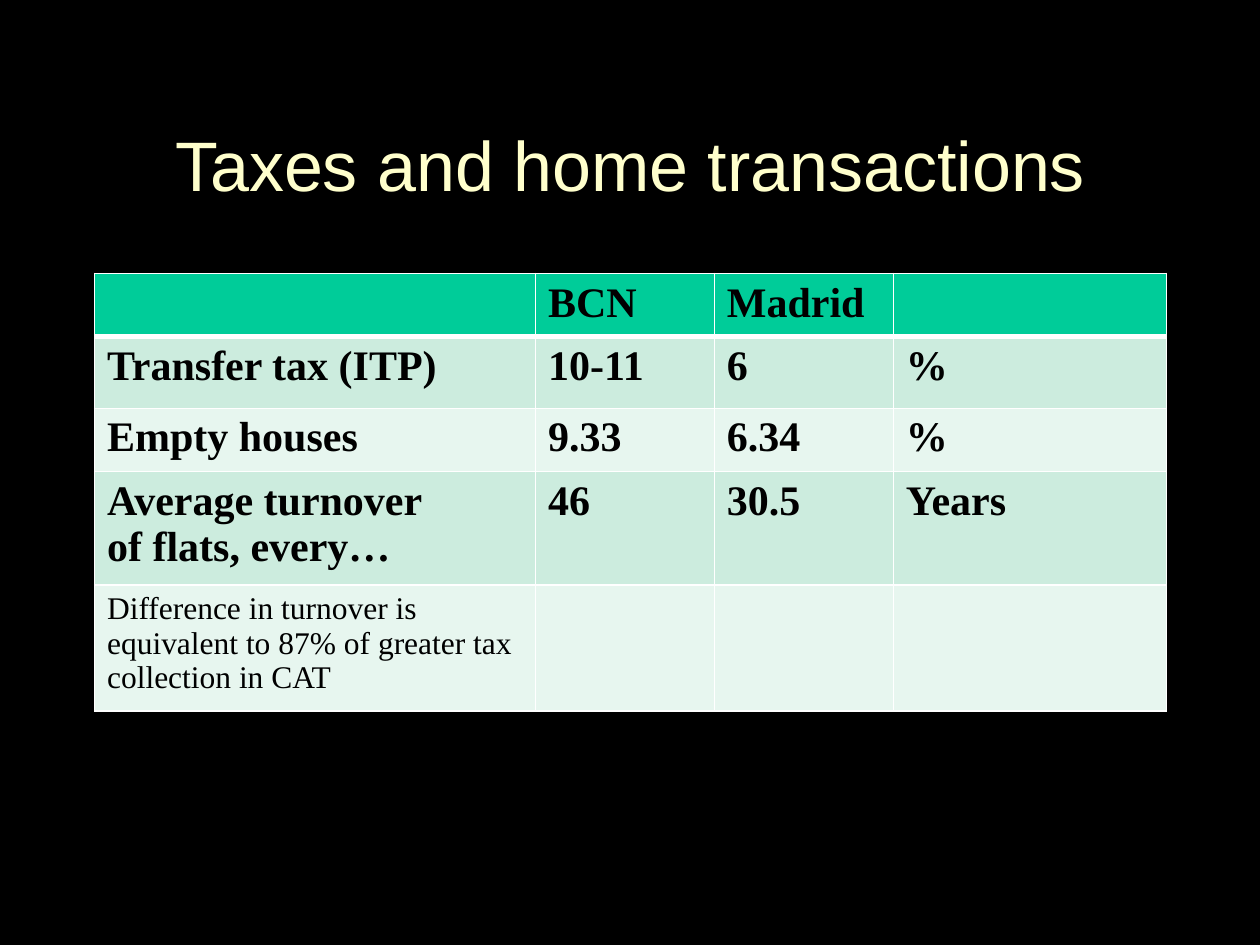
from lxml.etree import SubElement
from pptx import Presentation
from pptx.dml.color import RGBColor
from pptx.enum.text import MSO_ANCHOR as Anchor, PP_ALIGN as Align
from pptx.oxml.ns import qn
from pptx.util import Inches, Pt

BLACK = RGBColor(0x00, 0x00, 0x00)
WHITE = RGBColor(0xFF, 0xFF, 0xFF)
CREAM = RGBColor(0xFF, 0xFF, 0xCC)
GREEN = RGBColor(0x00, 0xCC, 0x99)
MINT = RGBColor(0xCC, 0xEC, 0xDE)
PALE_MINT = RGBColor(0xE7, 0xF6, 0xEF)

HEADING = "Taxes and home transactions"
ROWS = [
    ("", "BCN", "Madrid", ""),
    ("Transfer tax (ITP)", "10-11", "6", "%"),
    ("Empty houses", "9.33", "6.34", "%"),
    ("Average turnover\nof flats, every…", "46", "30.5", "Years"),
    ("Difference in turnover is equivalent to 87% of greater tax collection in CAT", "", "", ""),
]
COLUMN_WIDTHS = [3.5, 1.42, 1.42, 2.17]
ROW_HEIGHTS = [0.47, 0.57, 0.47, 0.84, 0.93]
LEFT, WIDTH = 0.75, 8.5


def write(frame, text, size=24, font="Times New Roman", color=BLACK, bold=False, align=Align.LEFT):
    paragraph = frame.paragraphs[0]
    paragraph.alignment = align
    for number, line in enumerate(text.split("\n")):
        if number:
            paragraph.add_line_break()
        run = paragraph.add_run()
        run.text = line
        run.font.size = Pt(size)
        run.font.name = font
        run.font.bold = bold
        run.font.color.rgb = color


def add_borders(cell, bottom_width):
    properties = cell._tc.get_or_add_tcPr()
    sides = [("a:lnL", 1), ("a:lnR", 1), ("a:lnT", 1), ("a:lnB", bottom_width)]
    for position, (side, width) in enumerate(sides):
        border = SubElement(properties, qn(side), w=str(Pt(width)))
        fill = SubElement(border, qn("a:solidFill"))
        SubElement(fill, qn("a:srgbClr"), val=str(WHITE))
        properties.insert(position, border)


def add_heading(slide):
    heading = slide.shapes.add_textbox(Inches(LEFT), Inches(0.67), Inches(WIDTH), Inches(1.25))
    frame = heading.text_frame
    frame.word_wrap = True
    frame.vertical_anchor = Anchor.MIDDLE
    write(frame, HEADING, size=40, font="Arial", color=CREAM, align=Align.CENTER)


def add_comparison(slide):
    comparison = slide.shapes.add_table(
        len(ROWS), len(COLUMN_WIDTHS), Inches(LEFT), Inches(2.17),
        Inches(WIDTH), Inches(sum(ROW_HEIGHTS))).table
    for column, width in zip(comparison.columns, COLUMN_WIDTHS):
        column.width = Inches(width)
    for row, height in zip(comparison.rows, ROW_HEIGHTS):
        row.height = Inches(height)

    last = len(ROWS) - 1
    for r, entries in enumerate(ROWS):
        band = GREEN if r == 0 else MINT if r % 2 else PALE_MINT
        for c, entry in enumerate(entries):
            cell = comparison.cell(r, c)
            cell.fill.solid()
            cell.fill.fore_color.rgb = band
            add_borders(cell, bottom_width=3 if r == 0 else 1)
            if entry:
                write(cell.text_frame, entry, size=18 if r == last else 24, bold=r != last)


def main():
    deck = Presentation()
    deck.slide_width, deck.slide_height = Inches(10), Inches(7.5)
    slide = deck.slides.add_slide(deck.slide_layouts[6])
    slide.background.fill.solid()
    slide.background.fill.fore_color.rgb = BLACK
    add_heading(slide)
    add_comparison(slide)
    deck.save("out.pptx")


if __name__ == "__main__":
    main()
